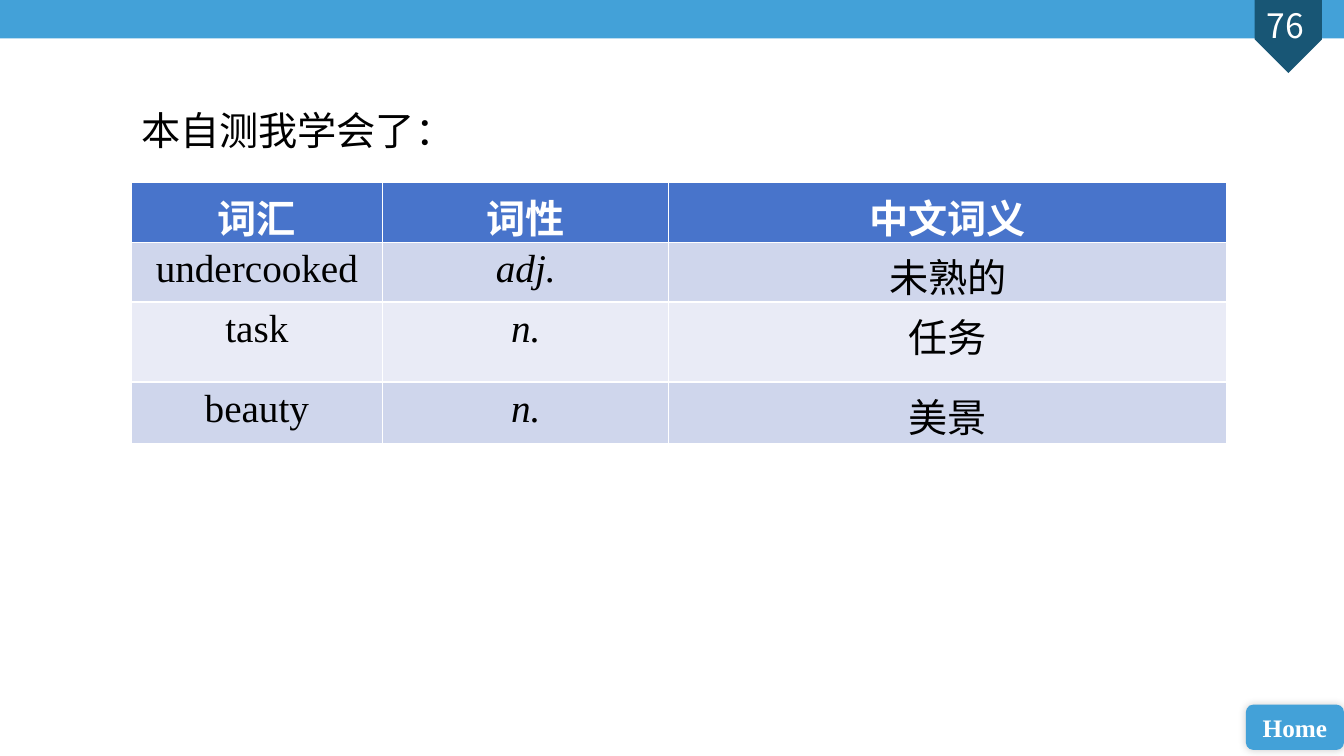
from lxml import etree
from pptx import Presentation
from pptx.dml.color import RGBColor
from pptx.enum.shapes import MSO_SHAPE
from pptx.enum.text import MSO_ANCHOR, PP_ALIGN
from pptx.oxml.ns import qn
from pptx.util import Pt

SKY = RGBColor(0x43, 0xA1, 0xD8)
NAVY = RGBColor(0x18, 0x56, 0x75)
HEADER_BLUE = RGBColor(0x48, 0x74, 0xCB)
BANDS = [RGBColor(0xE9, 0xEB, 0xF6), RGBColor(0xCF, 0xD6, 0xEC)]
WHITE = RGBColor(0xFF, 0xFF, 0xFF)
BLACK = RGBColor(0, 0, 0)
CENTER, LEFT = PP_ALIGN.CENTER, PP_ALIGN.LEFT
TOP, MIDDLE = MSO_ANCHOR.TOP, MSO_ANCHOR.MIDDLE
RECTANGLE, PENTAGON = MSO_SHAPE.RECTANGLE, MSO_SHAPE.PENTAGON
ROUNDED = MSO_SHAPE.ROUNDED_RECTANGLE
SERIF, CJK = "Times New Roman", "Noto Sans CJK SC"


def write(frame, text, size=28, font=SERIF, color=BLACK, bold=False,
          italic=False, align=CENTER, anchor=TOP):
    frame.word_wrap = True
    frame.vertical_anchor = anchor
    paragraph = frame.paragraphs[0]
    paragraph.alignment = align
    run = paragraph.add_run()
    run.text = text
    run.font.size, run.font.name = Pt(size), font
    run.font.bold, run.font.italic = bold, italic
    run.font.color.rgb = color
    east_asian = etree.SubElement(run.font._element, qn("a:ea"))
    east_asian.set("typeface", CJK)


def add_block(kind, left, top, width, height, fill):
    block = slide.shapes.add_shape(kind, Pt(left), Pt(top), Pt(width), Pt(height))
    block.shadow.inherit = False
    block.fill.solid()
    block.fill.fore_color.rgb = fill
    block.line.fill.background()
    return block


prs = Presentation()
prs.slide_width, prs.slide_height = Pt(960), Pt(540)
slide = prs.slides.add_slide(prs.slide_layouts[5])

# Top band with the page marker
add_block(RECTANGLE, 0, 0, 960, 27.4, SKY)
page_marker = add_block(PENTAGON, 894.2, 2.2, 52, 48, NAVY)
page_marker.rotation = 90
page_number = slide.shapes.add_textbox(Pt(882.6), Pt(0), Pt(70.6), Pt(36))
write(page_number.text_frame, "76", size=24, font=CJK, color=WHITE)

# Home button with a soft shadow
home = add_block(ROUNDED, 889.9, 503.3, 70.1, 32.4, SKY)
write(home.text_frame, "Home", size=18, color=WHITE, bold=True, anchor=MIDDLE)
effects = home._element.spPr.find(qn("a:effectLst"))
shadow = etree.SubElement(effects, qn("a:outerShdw"), blurRad=str(Pt(6)),
                          dist="0", dir="18900000", rotWithShape="0")
shadow_color = etree.SubElement(shadow, qn("a:srgbClr"), val="000000")
etree.SubElement(shadow_color, qn("a:alpha"), val="20000")

# Heading
heading = slide.shapes.title
heading.left, heading.top = Pt(93.6), Pt(72)
heading.width, heading.height = Pt(278.6), Pt(41)
write(heading.text_frame, "本自测我学会了：", font="Calibri", align=LEFT)

# Vocabulary table
VOCABULARY = [
    ("词汇", "词性", "中文词义"),
    ("undercooked", "adj.", "未熟的"),
    ("task", "n.", "任务"),
    ("beauty", "n.", "美景"),
]
COLUMN_WIDTHS = [179.8, 204.4, 398.4]
ROW_HEIGHTS = [42.6, 42.6, 57.2, 43.6]
vocabulary = slide.shapes.add_table(
    len(ROW_HEIGHTS), len(COLUMN_WIDTHS), Pt(93.6), Pt(130.6),
    Pt(sum(COLUMN_WIDTHS)), Pt(sum(ROW_HEIGHTS))).table
for column, width in zip(vocabulary.columns, COLUMN_WIDTHS):
    column.width = Pt(width)
for r, (entry, height) in enumerate(zip(VOCABULARY, ROW_HEIGHTS)):
    vocabulary.rows[r].height = Pt(height)
    is_header = r == 0
    for c, text in enumerate(entry):
        cell = vocabulary.cell(r, c)
        cell.margin_bottom = 0
        cell.fill.solid()
        cell.fill.fore_color.rgb = HEADER_BLUE if is_header else BANDS[r % 2]
        write(cell.text_frame, text, color=WHITE if is_header else BLACK,
              bold=is_header, italic=not is_header and c == 1)

prs.save("out.pptx")
